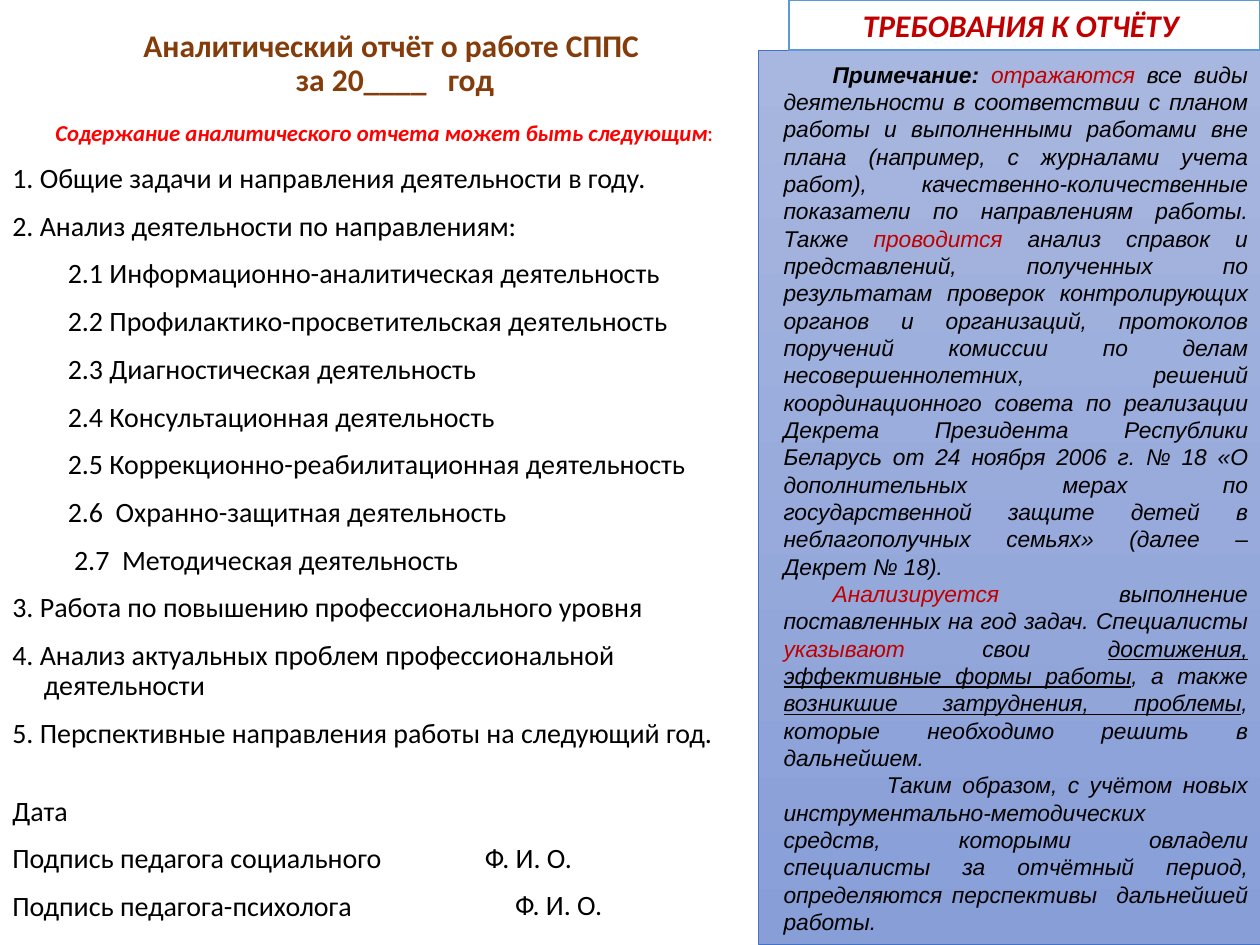
from dataclasses import dataclass

from pptx import Presentation
from pptx.dml.color import RGBColor
from pptx.enum.shapes import MSO_SHAPE
from pptx.enum.text import MSO_ANCHOR, PP_ALIGN
from pptx.util import Inches, Pt

RECTANGLE = MSO_SHAPE.RECTANGLE
TOP, MIDDLE = MSO_ANCHOR.TOP, MSO_ANCHOR.MIDDLE
LEFT, CENTER, JUSTIFY = PP_ALIGN.LEFT, PP_ALIGN.CENTER, PP_ALIGN.JUSTIFY


@dataclass(frozen=True)
class Theme:
    brown: str = "843C0B"
    red: str = "FF0000"
    dark_red: str = "C00000"
    black: str = "000000"
    white: str = "FFFFFF"
    panel_top: str = "A8B7DF"
    panel_bottom: str = "889ED7"
    panel_line: str = "4472C4"
    header_line: str = "5B9BD5"
    main_font: str = "Calibri"
    note_font: str = "Arial"
    heading: float = 18
    body: float = 16
    note: float = 13


THEME = Theme()

SECTIONS = [
    "1. Общие задачи и направления деятельности в году.",
    "2. Анализ деятельности по направлениям:",
    "2.1 Информационно-аналитическая деятельность",
    "2.2 Профилактико-просветительская деятельность",
    "2.3 Диагностическая деятельность",
    "2.4 Консультационная деятельность",
    "2.5 Коррекционно-реабилитационная деятельность",
    "2.6  Охранно-защитная деятельность",
    "2.7  Методическая деятельность",
    "3. Работа по повышению профессионального уровня",
    "4. Анализ актуальных проблем профессиональной деятельности",
    "5. Перспективные направления работы на следующий год.",
]

SIGNATURES = ["Подпись педагога социального", "Подпись педагога-психолога"]
NAME_MARGINS = [0, 0.24]

# First-line indent in inches, then spans of text and style
NOTES = [
    (0.39, [
        ("Примечание: ", "bold"), ("отражаются ", "red"),
        ("все виды деятельности в соответствии с планом работы и выполненными "
         "работами вне плана (например, с журналами учета работ), "
         "качественно-количественные показатели по направлениям работы. Также ", "plain"),
        ("проводится ", "red"),
        ("анализ справок и представлений, полученных по результатам проверок "
         "контролирующих органов и организаций, протоколов поручений комиссии по "
         "делам несовершеннолетних, решений координационного совета по реализации "
         "Декрета Президента Республики Беларусь от 24 ноября 2006 г. № 18 "
         "«О дополнительных мерах по государственной защите детей в "
         "неблагополучных семьях» (далее – Декрет № 18).", "plain"),
    ]),
    (0.39, [
        ("Анализируется", "red"),
        (" выполнение поставленных на год задач. Специалисты ", "plain"),
        ("указывают ", "red"), ("свои ", "plain"),
        ("достижения,", "underline"), (" ", "plain"),
        ("эффективные формы работы", "underline"), (", а также ", "plain"),
        ("возникшие затруднения, проблемы", "underline"),
        (", которые необходимо решить в дальнейшем.", "plain"),
    ]),
    (0.82, [
        ("Таким образом, с учётом новых инструментально-методических средств, "
         "которыми овладели специалисты за отчётный период, определяются "
         "перспективы  дальнейшей работы.", "plain"),
    ]),
]


def set_frame(shape, anchor):
    frame = shape.text_frame
    frame.word_wrap = True
    frame.vertical_anchor = anchor
    return frame


def add_text_box(page, box, anchor=TOP):
    return set_frame(page.shapes.add_textbox(*map(Inches, box)), anchor)


def add_panel(page, box, line_color, line_width):
    panel = page.shapes.add_shape(RECTANGLE, *map(Inches, box))
    panel.shadow.inherit = False
    panel.line.color.rgb = RGBColor.from_string(line_color)
    panel.line.width = Pt(line_width)
    return panel


def add_para(frame, align, spacing=1.0, before=0, margin=0, indent=0):
    first = frame.paragraphs[0]
    is_first = not first.runs
    para = first if is_first else frame.add_paragraph()
    para.alignment = align
    para.line_spacing = spacing
    para.space_before = Pt(0 if is_first else before)
    properties = para._p.get_or_add_pPr()
    properties.set("marL", str(Inches(margin)))
    properties.set("indent", str(Inches(indent)))
    return para


def add_span(para, text, size, color, font=THEME.main_font,
             bold=False, italic=False, underline=False):
    span = para.add_run()
    span.text = text
    span.font.name = font
    span.font.size = Pt(size)
    span.font.color.rgb = RGBColor.from_string(color)
    span.font.bold = bold
    span.font.italic = italic
    span.font.underline = underline


def add_title(page, box):
    para = add_para(add_text_box(page, box, MIDDLE), CENTER, spacing=0.9)
    add_span(para, "Аналитический отчёт о работе СППС ", THEME.heading, THEME.brown, bold=True)
    para.add_line_break()
    add_span(para, "за 20____   год", THEME.heading, THEME.brown, bold=True)


def add_contents(page, box):
    frame = add_text_box(page, box)

    # Lead line
    para = add_para(frame, CENTER, 0.9, margin=0.25, indent=-0.25)
    add_span(para, "Содержание аналитического отчета может быть следующим",
             THEME.note, THEME.red, bold=True, italic=True)
    add_span(para, ":", THEME.note, THEME.red)

    # Numbered sections and subsections
    for text in SECTIONS:
        margin = 0.69 if text.startswith("2.") and text[2].isdigit() else 0.25
        if text.startswith("2.7"):
            margin += 0.05
        para = add_para(frame, LEFT, 0.9, 10, margin, -0.25)
        add_span(para, text, THEME.body, THEME.black)

    # Date and signatures
    for text, before in [("Дата", 27)] + [(label, 10) for label in SIGNATURES]:
        para = add_para(frame, LEFT, 0.9, before)
        add_span(para, text, THEME.body, THEME.black)


def add_signature_names(page, box):
    frame = add_text_box(page, box)
    for margin in NAME_MARGINS:
        para = add_para(frame, LEFT, 0.9, 10, margin)
        add_span(para, "Ф. И. О.", THEME.body, THEME.black)


def add_notes(page, box):
    panel = add_panel(page, box, THEME.panel_line, 0.5)
    panel.fill.gradient()
    panel.fill.gradient_angle = 270
    for stop, color in zip(panel.fill.gradient_stops, (THEME.panel_top, THEME.panel_bottom)):
        stop.color.rgb = RGBColor.from_string(color)
    frame = set_frame(panel, MIDDLE)
    for indent, spans in NOTES:
        para = add_para(frame, JUSTIFY, margin=0.1, indent=indent)
        for text, style in spans:
            color = THEME.dark_red if style == "red" else THEME.black
            add_span(para, text, THEME.note, color, THEME.note_font, bold=style == "bold",
                     italic=True, underline=style == "underline")


def add_notes_header(page, box):
    panel = add_panel(page, box, THEME.header_line, 1)
    panel.fill.solid()
    panel.fill.fore_color.rgb = RGBColor.from_string(THEME.white)
    para = add_para(set_frame(panel, MIDDLE), CENTER)
    add_span(para, "ТРЕБОВАНИЯ К ОТЧЁТУ ", THEME.heading, THEME.dark_red, bold=True, italic=True)


def main():
    deck = Presentation()
    deck.slide_width, deck.slide_height = Inches(10), Inches(7.5)
    page = deck.slides.add_slide(deck.slide_layouts[6])
    add_title(page, (0.2, 0.21, 5.87, 0.6))
    add_contents(page, (0, 0.92, 6.1, 6.15))
    add_signature_names(page, (3.75, 6.65, 1.5, 0.75))
    add_notes(page, (6.02, 0.4, 3.98, 7.1))
    add_notes_header(page, (6.26, 0, 3.74, 0.4))
    deck.save("out.pptx")


if __name__ == "__main__":
    main()
